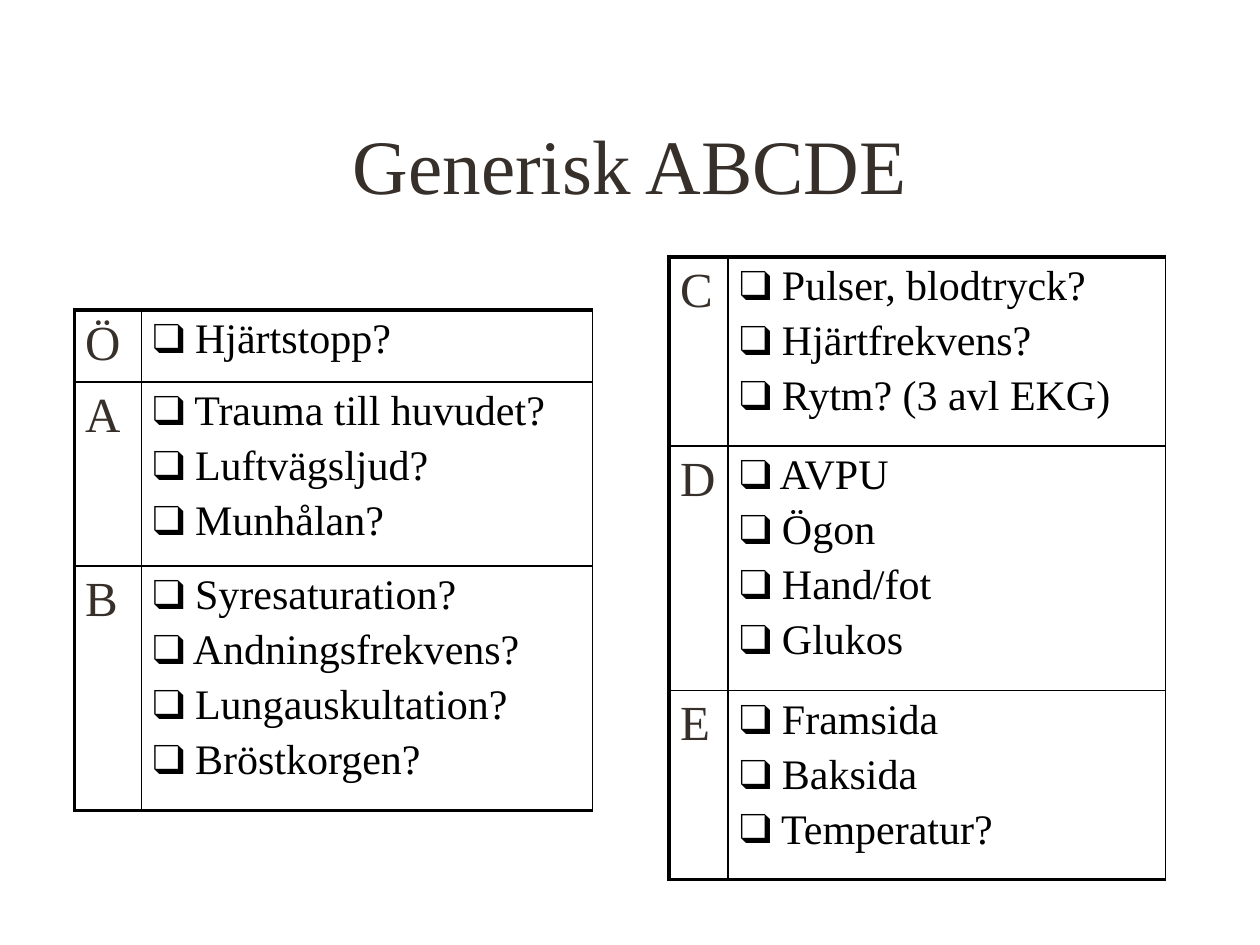
from lxml import etree
from pptx import Presentation
from pptx import util as u
from pptx.dml.color import RGBColor
from pptx.enum import text
from pptx.oxml import parse_xml
from pptx.oxml.ns import nsdecls

FONT = "Times New Roman"
BROWN, BLACK = "37302A", "000000"
THIN, THICK = 1, 2.25


def add_text(paragraph, words, size, colour, bullet=None):
    """Add one run, with spacing of 20 % above it and an optional bullet."""
    run = paragraph.add_run()
    run.text = words
    run.font.name = FONT
    run.font.size = u.Pt(size)
    run.font.color.rgb = RGBColor.from_string(colour)
    props = paragraph._p.get_or_add_pPr()
    props.append(parse_xml(f'<a:spcBef {nsdecls("a")}><a:spcPct val="20000"/></a:spcBef>'))
    if bullet:
        props.append(parse_xml(f'<a:buFont {nsdecls("a")} typeface="{FONT}"/>'))
        props.append(parse_xml(f'<a:buChar {nsdecls("a")} char="{bullet}"/>'))


def set_borders(cell, **widths):
    """Draw black borders; the sides come in the order L, R, T, B."""
    props = cell._tc.get_or_add_tcPr()
    for place, (side, width) in enumerate(widths.items()):
        props.insert(place, parse_xml(
            f'<a:ln{side} {nsdecls("a")} w="{u.Pt(width)}"><a:solidFill>'
            f'<a:srgbClr val="{BLACK}"/></a:solidFill></a:ln{side}>'))


prs = Presentation()
prs.slide_width, prs.slide_height = u.Cm(25.4), u.Cm(19.05)
slide = prs.slides.add_slide(prs.slide_layouts[5])

title = slide.shapes.title
title.left, title.top, title.width, title.height = u.Cm(1.9), u.Cm(1.7), u.Cm(21.6), u.Cm(3.18)
title.text_frame.vertical_anchor = text.MSO_ANCHOR.MIDDLE
heading = title.text_frame.paragraphs[0]
heading.alignment = text.PP_ALIGN.CENTER
add_text(heading, "Generisk ABCDE", 44, BROWN)

# left, top, column widths, then letter, row height and checks per row (cm)
checklists = [
    (1.5, 6.25, (1.35, 9.09), [
        ("Ö", 1.45, ["Hjärtstopp?"]),
        ("A", 3.71, ["Trauma till huvudet?", "Luftvägsljud?", "Munhålan?"]),
        ("B", 4.93, ["Syresaturation?", "Andningsfrekvens?", "Lungauskultation?", "Bröstkorgen?"]),
    ]),
    (13.49, 5.18, (1.19, 8.81), [
        ("C", 3.81, ["Pulser, blodtryck?", "Hjärtfrekvens?", "Rytm? (3 avl EKG)"]),
        ("D", 4.93, ["AVPU", "Ögon", "Hand/fot", "Glukos"]),
        ("E", 3.81, ["Framsida", "Baksida", "Temperatur?"]),
    ]),
]

for left, top, widths, steps in checklists:
    height = sum(step[1] for step in steps)
    table = slide.shapes.add_table(len(steps), 2, u.Cm(left), u.Cm(top),
                                   u.Cm(sum(widths)), u.Cm(height)).table
    table.first_row = table.horz_banding = False
    for column, width in zip(table.columns, widths):
        column.width = u.Cm(width)

    for row, (letter, row_height, checks) in enumerate(steps):
        table.rows[row].height = u.Cm(row_height)
        letter_cell, check_cell = table.cell(row, 0), table.cell(row, 1)
        add_text(letter_cell.text_frame.paragraphs[0], letter, 28, BROWN)
        for number, check in enumerate(checks):
            frame = check_cell.text_frame
            paragraph = frame.add_paragraph() if number else frame.paragraphs[0]
            add_text(paragraph, " " + check, 24, BLACK, bullet="❑")

        upper = THICK if row == 0 else THIN
        lower = THICK if row == len(steps) - 1 else THIN
        for cell, outer in ((letter_cell, THICK), (check_cell, THIN)):
            cell.margin_left = cell.margin_right = u.Cm(0.23)
            cell.margin_top = cell.margin_bottom = u.Cm(0.13)
            cell.fill.background()
            set_borders(cell, L=outer, R=THIN, T=upper, B=lower)

prs.save("out.pptx")
